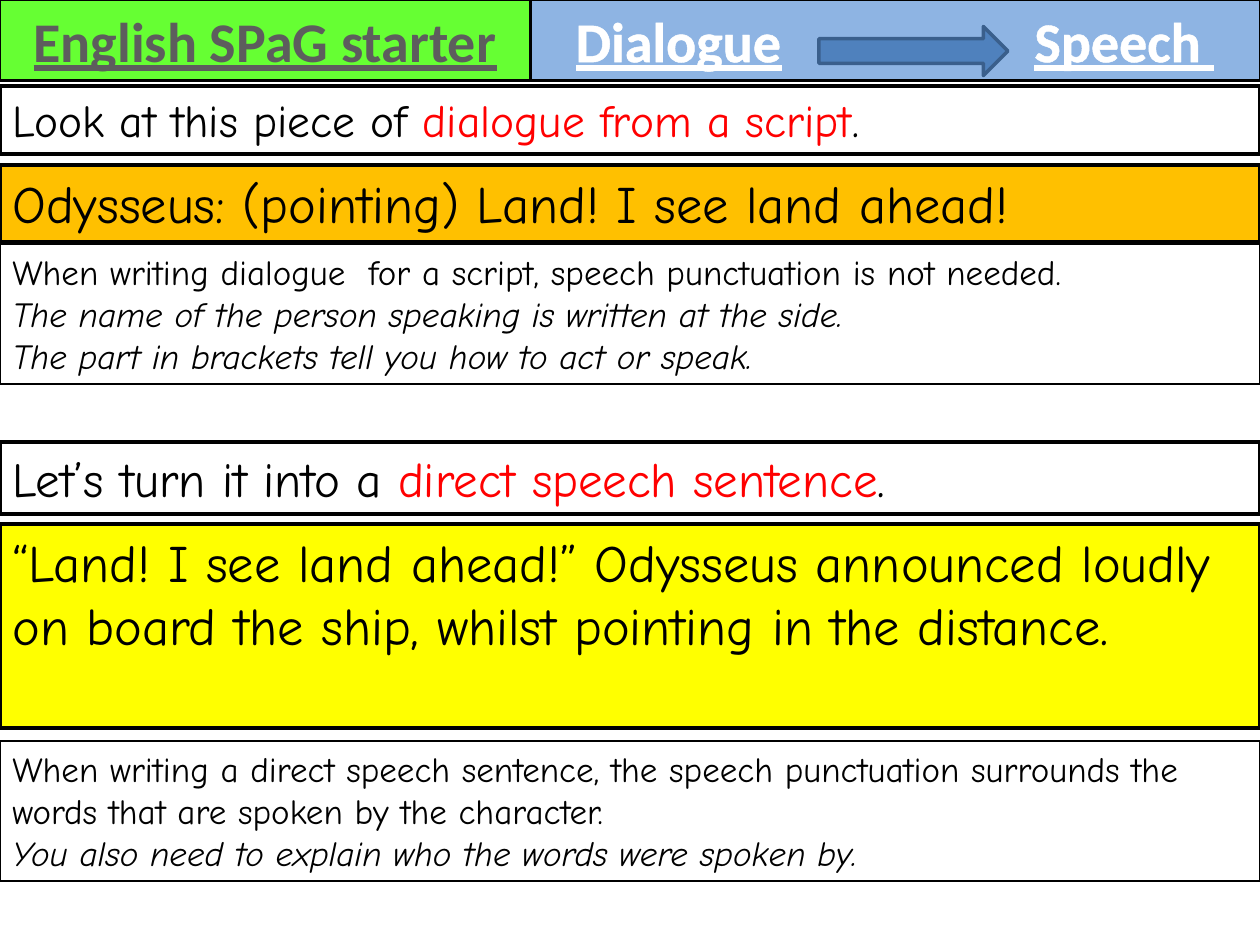
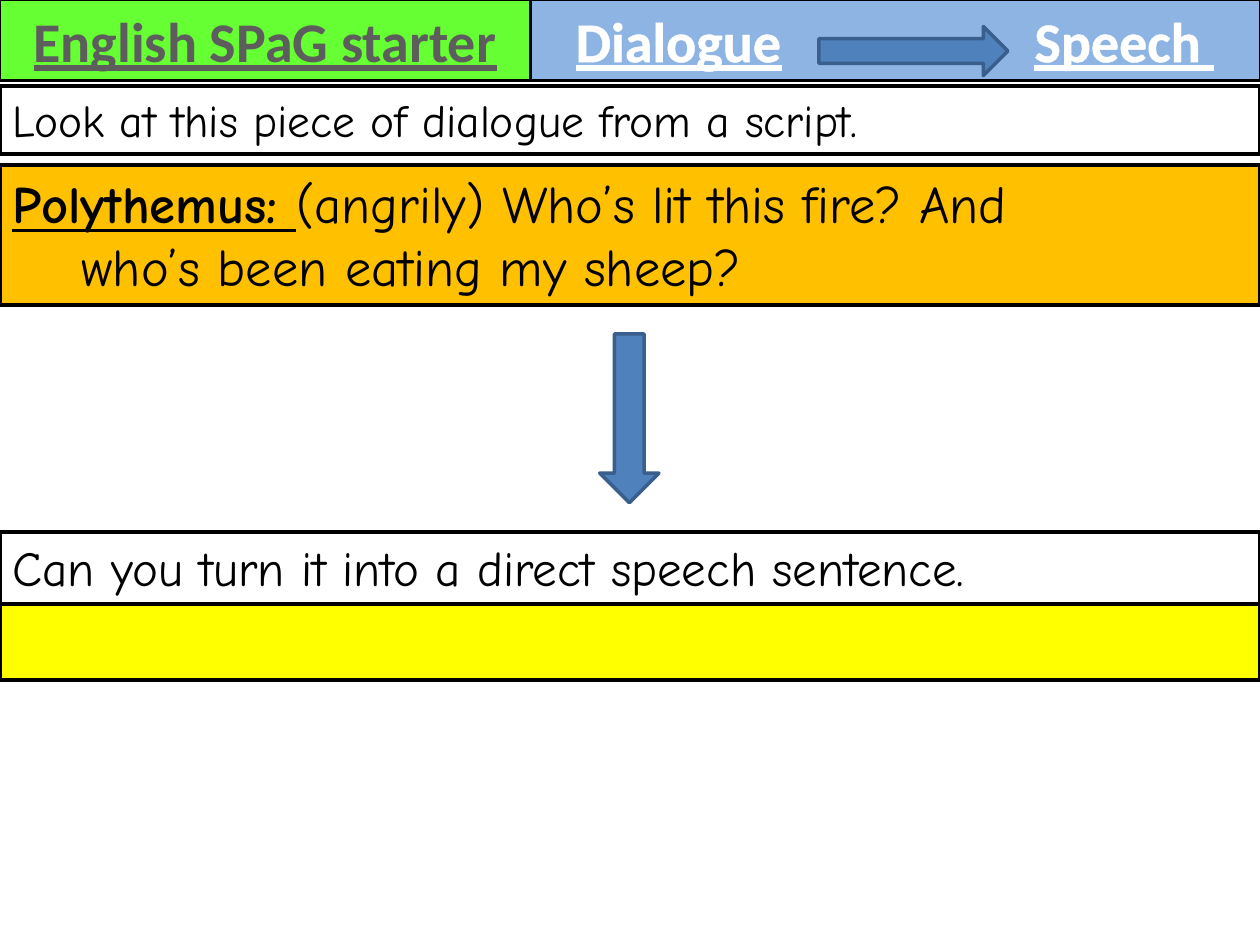
"""Builds two English starter slides that turn script dialogue into direct speech."""
from dataclasses import dataclass
from typing import Any, Optional

import lxml.etree
import pptx
import pptx.dml.color
import pptx.enum.shapes
import pptx.enum.text
import pptx.oxml.ns
import pptx.util

Inches = pptx.util.Inches
Pt = pptx.util.Pt
RGBColor = pptx.dml.color.RGBColor
MSO_SHAPE = pptx.enum.shapes.MSO_SHAPE

BLACK = RGBColor(0x00, 0x00, 0x00)
WHITE = RGBColor(0xFF, 0xFF, 0xFF)
RED = RGBColor(0xFF, 0x00, 0x00)
GREEN = RGBColor(0x66, 0xFF, 0x33)
SKY = RGBColor(0x8E, 0xB4, 0xE3)
ORANGE = RGBColor(0xFF, 0xC0, 0x00)
YELLOW = RGBColor(0xFF, 0xFF, 0x00)
ARROW_BLUE = RGBColor(0x4F, 0x81, 0xBD)
ARROW_EDGE = RGBColor(0x3A, 0x5F, 0x8C)
TITLE_STOPS = (
    (0, RGBColor(0x55, 0x55, 0x55)),
    (49, RGBColor(0x5D, 0x5D, 0x5D)),
    (50, BLACK),
    (95, BLACK),
    (100, BLACK),
)

SLIDE_WIDTH = Inches(10)
SLIDE_HEIGHT = Inches(7.5)
TITLE_WIDTH = Inches(4.21)
HEADER_HEIGHT = Inches(0.64)
SPEECH_TAB = Inches(3.64)
TITLE_ONLY_LAYOUT = 5

FRAME_FORMAT = {
    "word_wrap": True,
    "auto_size": pptx.enum.text.MSO_AUTO_SIZE.NONE,
    "vertical_anchor": pptx.enum.text.MSO_ANCHOR.TOP,
}
HEADER_FONT = {"name": "Calibri", "size": Pt(32), "bold": True, "underline": True}


@dataclass(frozen=True)
class Phrase:
    """A stretch of text with one look."""

    text: str
    color: RGBColor = BLACK
    italic: bool = False
    strong: bool = False
    new_line: bool = False


@dataclass(frozen=True)
class Panel:
    """A full-width bordered box of text."""

    top: float
    height: float
    size: int
    paragraphs: tuple[tuple[Phrase, ...], ...] = ()
    fill: Optional[RGBColor] = None
    border: float = 2.25
    hanging: float = 0


@dataclass(frozen=True)
class BlockArrow:
    """A block arrow that leads from dialogue to speech."""

    kind: MSO_SHAPE
    left: float
    top: float
    width: float
    height: float


HEADER_ARROW = BlockArrow(MSO_SHAPE.RIGHT_ARROW, 6.5, 0.21, 1.5, 0.39)

EXAMPLE_PANELS = (
    Panel(0.68, 0.54, 26, ((
        Phrase("Look at this piece of "), Phrase("dialogue from a script", RED), Phrase("."),
    ),)),
    Panel(1.31, 0.61, 30, ((Phrase("Odysseus: (pointing) Land! I see land ahead!"),),), ORANGE),
    Panel(1.94, 1.11, 20, (
        (Phrase("When writing dialogue  for a script, speech punctuation is not needed."),),
        (Phrase("The name of the person speaking is written at the side.", italic=True),),
        (Phrase("The part in brackets tell you how to act or speak.", italic=True),),
    ), border=1),
    Panel(3.51, 0.57, 28, ((
        Phrase("Let’s turn it into a "), Phrase("direct speech sentence", RED), Phrase("."),
    ),)),
    Panel(4.16, 1.62, 30, ((
        Phrase("“Land! I see land ahead!” Odysseus announced loudly on board the ship, "
               "whilst pointing in the distance."),
    ),), YELLOW),
    Panel(5.88, 1.11, 20, (
        (Phrase("When writing a direct speech sentence, the speech punctuation surrounds "
                "the words that are spoken by the character."),),
        (Phrase("You also need to explain who the words were spoken by.", italic=True),),
    ), border=1),
)

TASK_PANELS = (
    Panel(0.68, 0.54, 26, ((Phrase("Look at this piece of dialogue from a script."),),)),
    Panel(1.31, 1.11, 30, ((
        Phrase("Polythemus: ", strong=True),
        Phrase("(angrily) Who’s lit this fire? And"),
        Phrase("who’s been eating my sheep?", new_line=True),
    ),), ORANGE, hanging=0.55),
    Panel(4.22, 0.57, 28, ((Phrase("Can you turn it into a direct speech sentence."),),)),
    Panel(4.79, 0.61, 30, fill=YELLOW),
)
TASK_ARROW = BlockArrow(MSO_SHAPE.DOWN_ARROW, 4.76, 2.65, 0.47, 1.34)

LESSON = (
    (EXAMPLE_PANELS, (HEADER_ARROW,)),
    (TASK_PANELS, (HEADER_ARROW, TASK_ARROW)),
)


def apply_format(target: Any, values: dict[str, Any]) -> None:
    """Set each named attribute on the target."""
    for name, value in values.items():
        setattr(target, name, value)


def paint(shape: Any, fill: Optional[RGBColor], edge: RGBColor, width: float) -> None:
    """Give a shape its fill and outline."""
    if fill is None:
        shape.fill.background()
    else:
        shape.fill.solid()
        shape.fill.fore_color.rgb = fill
    shape.line.color.rgb = edge
    shape.line.width = Pt(width)


def add_child(parent: Any, tag: str, **attributes: Any) -> Any:
    """Append a drawing element with its attributes."""
    values = {name: str(value) for name, value in attributes.items()}
    return lxml.etree.SubElement(parent, pptx.oxml.ns.qn(tag), values)


def outline_text(run: Any) -> None:
    """Put a thin white outline round the letters of a run."""
    properties = run.font._element
    outline = add_child(properties, "a:ln", w=Pt(1.4))
    add_child(add_child(outline, "a:solidFill"), "a:srgbClr", val=WHITE)
    properties.insert(0, outline)


def shade_text(run: Any) -> None:
    """Fill the letters of a run with the title gradient."""
    properties = run.font._element
    gradient = add_child(properties, "a:gradFill")
    stops = add_child(gradient, "a:gsLst")
    for percent, color in TITLE_STOPS:
        stop = add_child(stops, "a:gs", pos=percent * 1000)
        add_child(stop, "a:srgbClr", val=color)
    add_child(gradient, "a:lin", ang=90 * 60000, scaled=0)
    properties.insert(0, gradient)


def add_header(slide: Any) -> None:
    """Draw the title and the dialogue-to-speech band beside it."""
    title = slide.shapes.title
    apply_format(title, {"left": 0, "top": 0, "width": TITLE_WIDTH, "height": HEADER_HEIGHT})
    band = slide.shapes.add_textbox(TITLE_WIDTH, 0, SLIDE_WIDTH - TITLE_WIDTH, HEADER_HEIGHT)
    headings = ((title, "English SPaG starter", GREEN), (band, "Dialogue\tSpeech ", SKY))
    for shape, wording, fill in headings:
        paint(shape, fill, BLACK, 1.5)
        apply_format(shape.text_frame, FRAME_FORMAT)
        run = shape.text_frame.paragraphs[0].add_run()
        run.text = wording
        apply_format(run.font, HEADER_FONT)
        if shape is title:
            shade_text(run)
        else:
            run.font.color.rgb = WHITE
        outline_text(run)
    title.text_frame.paragraphs[0].alignment = pptx.enum.text.PP_ALIGN.CENTER
    band.text_frame.margin_left = Inches(0.36)
    band_properties = band.text_frame.paragraphs[0]._p.get_or_add_pPr()
    add_child(add_child(band_properties, "a:tabLst"), "a:tab", pos=SPEECH_TAB, algn="l")


def add_panel(slide: Any, panel: Panel) -> None:
    """Draw one full-width panel with its text."""
    box = slide.shapes.add_textbox(0, Inches(panel.top), SLIDE_WIDTH, Inches(panel.height))
    paint(box, panel.fill, BLACK, panel.border)
    frame = box.text_frame
    apply_format(frame, FRAME_FORMAT)
    for index, phrases in enumerate(panel.paragraphs):
        paragraph = frame.add_paragraph() if index else frame.paragraphs[0]
        if panel.hanging:
            properties = paragraph._p.get_or_add_pPr()
            properties.set("marL", str(Inches(panel.hanging)))
            properties.set("indent", str(-Inches(panel.hanging)))
        for phrase in phrases:
            if phrase.new_line:
                paragraph.add_line_break()
            run = paragraph.add_run()
            run.text = phrase.text
            apply_format(run.font, {
                "name": "Comic Neue",
                "size": Pt(panel.size),
                "italic": phrase.italic,
                "bold": phrase.strong,
                "underline": phrase.strong,
            })
            run.font.color.rgb = phrase.color


def add_arrow(slide: Any, arrow: BlockArrow) -> None:
    """Draw one block arrow."""
    place = (Inches(length) for length in (arrow.left, arrow.top, arrow.width, arrow.height))
    pointer = slide.shapes.add_shape(arrow.kind, *place)
    pointer.shadow.inherit = False
    paint(pointer, ARROW_BLUE, ARROW_EDGE, 2)


def main() -> None:
    """Build and save the lesson."""
    deck = pptx.Presentation()
    apply_format(deck, {"slide_width": SLIDE_WIDTH, "slide_height": SLIDE_HEIGHT})
    for panels, arrows in LESSON:
        slide = deck.slides.add_slide(deck.slide_layouts[TITLE_ONLY_LAYOUT])
        add_header(slide)
        for panel in panels:
            add_panel(slide, panel)
        for arrow in arrows:
            add_arrow(slide, arrow)
    deck.save("out.pptx")


if __name__ == "__main__":
    main()
